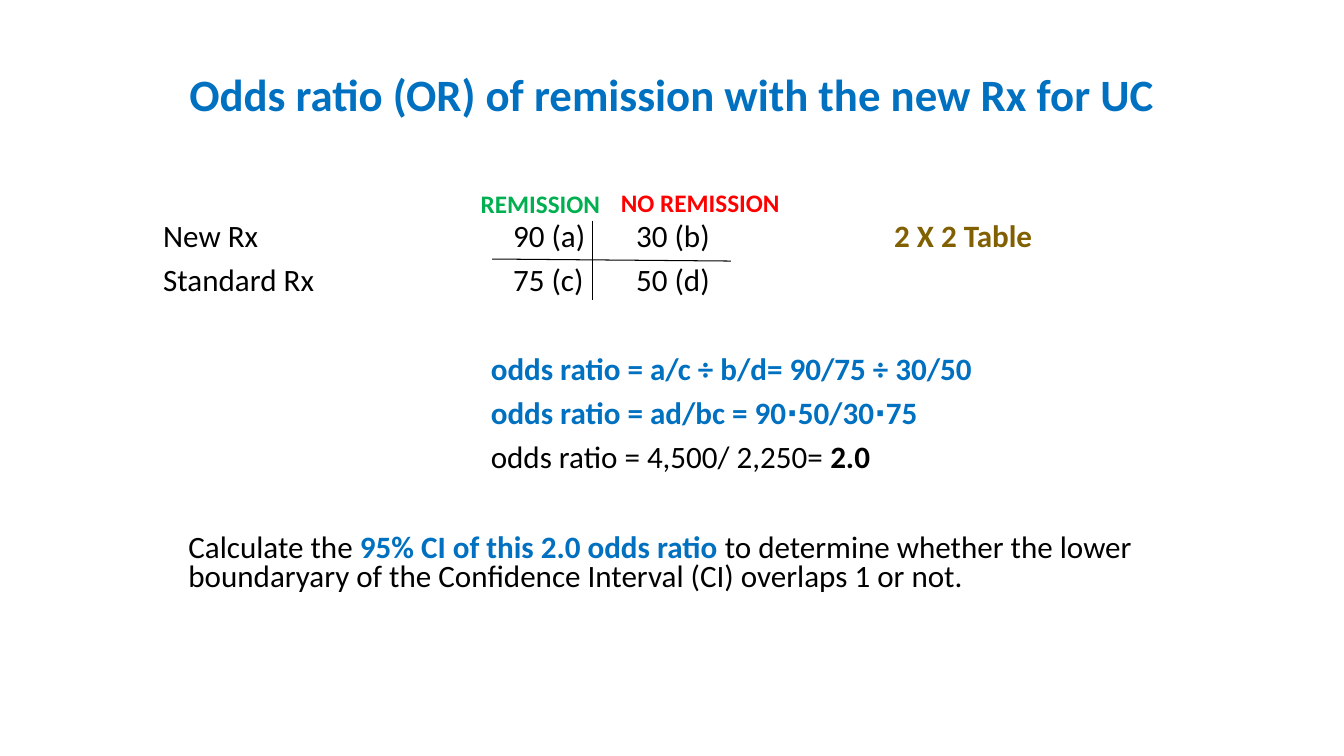
from lxml.etree import SubElement
from pptx import Presentation
from pptx.dml.color import RGBColor
from pptx.enum.text import MSO_ANCHOR, PP_ALIGN
from pptx.oxml.ns import qn
from pptx.util import Inches, Pt

BLUE = RGBColor(0x00, 0x70, 0xC0)
GREEN = RGBColor(0x00, 0xB0, 0x50)
RED = RGBColor(0xFF, 0x00, 0x00)
BROWN = RGBColor(0x80, 0x60, 0x00)
BLACK = RGBColor(0x00, 0x00, 0x00)
FONT = "Calibri"

# Content: each line is a list of (text, colour, bold) runs
TITLE = "Odds ratio (OR) of remission with the new Rx for UC"
COUNTS = [
    [("New Rx\t90 (a)\t30 (b)\t", BLACK, False), ("2 X 2 Table", BROWN, True)],
    [("Standard Rx\t75 (c)\t50 (d)", BLACK, False)],
]
ODDS = [
    [("odds ratio = a/c ÷ b/d= 90/75 ÷ 30/50", BLUE, True)],
    [("odds ratio = ad/bc = 90⋅50/30⋅75", BLUE, True)],
    [("odds ratio = 4,500/ 2,250= ", BLACK, False), ("2.0", BLACK, True)],
]
NOTE = [
    [("Calculate the ", BLACK, False),
     ("95% CI of this 2.0 odds ratio ", BLUE, True),
     ("to determine whether the lower boundaryary of the Confidence "
      "Interval (CI) overlaps 1 or not.", BLACK, False)],
]
HEADS = [
    ("REMISSION", GREEN, 4.67, 1.82, 1.4),
    ("NO REMISSION", RED, 6.06, 1.81, 2.18),
]
RULES = [(4.88, 2.57, 7.25, 2.59), (5.88, 2.19, 5.88, 2.98)]

# Body grid: rows share one pitch, and blocks start on whole rows
TOP, PITCH, RIGHT = 2.17, 0.44, 12.04
BLOCKS = [  # lines, first row, left, tab stops
    (COUNTS, 0, 1.52, (3.47, 4.69, 7.25)),
    (ODDS, 3, 4.77, ()),
    (NOTE, 7, 1.77, ()),
]


def style(font, size, color=None, bold=None):
    font.name, font.size = FONT, Pt(size)
    if color is not None:
        font.color.rgb, font.bold = color, bold


def add_box(slide, left, top, width, height):
    box = slide.shapes.add_textbox(
        Inches(left), Inches(top), Inches(width), Inches(height))
    box.text_frame.word_wrap = True
    return box.text_frame


def add_tabs(para, stops):
    tabs = SubElement(para._p.get_or_add_pPr(), qn("a:tabLst"))
    for stop in stops:
        SubElement(tabs, qn("a:tab"), pos=str(Inches(stop)), algn="l")


def add_block(slide, lines, row, left, stops):
    frame = add_box(slide, left, TOP + row * PITCH, RIGHT - left,
                    len(lines) * PITCH + 0.1)
    for i, line in enumerate(lines):
        para = frame.add_paragraph() if i else frame.paragraphs[0]
        para.line_spacing = 0.8
        para.space_before = Pt(10 if i else 0)
        if stops:
            add_tabs(para, stops)
        style(para.font, 22.2)
        for text, color, bold in line:
            run = para.add_run()
            run.text = text
            style(run.font, 22.2, color, bold)


def main():
    deck = Presentation()
    deck.slide_width, deck.slide_height = Inches(13.33), Inches(7.5)
    slide = deck.slides.add_slide(deck.slide_layouts[5])

    # Title
    title = slide.shapes.title
    title.left, title.top = Inches(0), Inches(0.34)
    title.width, title.height = Inches(13.33), Inches(1.25)
    title.text_frame.text = TITLE
    title.text_frame.vertical_anchor = MSO_ANCHOR.MIDDLE
    para = title.text_frame.paragraphs[0]
    para.alignment, para.line_spacing = PP_ALIGN.CENTER, 0.9
    style(para.font, 32, BLUE, True)

    # Counts, odds and note
    for block in BLOCKS:
        add_block(slide, *block)

    # Cross rules of the two-by-two table
    for x1, y1, x2, y2 in RULES:
        rule = slide.shapes.add_connector(
            1, Inches(x1), Inches(y1), Inches(x2), Inches(y2))
        rule.line.color.rgb, rule.line.width = BLACK, Pt(0.75)
        SubElement(rule._element.spPr, qn("a:effectLst"))

    # Column heads
    for text, color, left, top, width in HEADS:
        para = add_box(slide, left, top, width, 0.4).paragraphs[0]
        para.text = text
        style(para.font, 18, color, True)

    deck.save("out.pptx")


if __name__ == "__main__":
    main()
